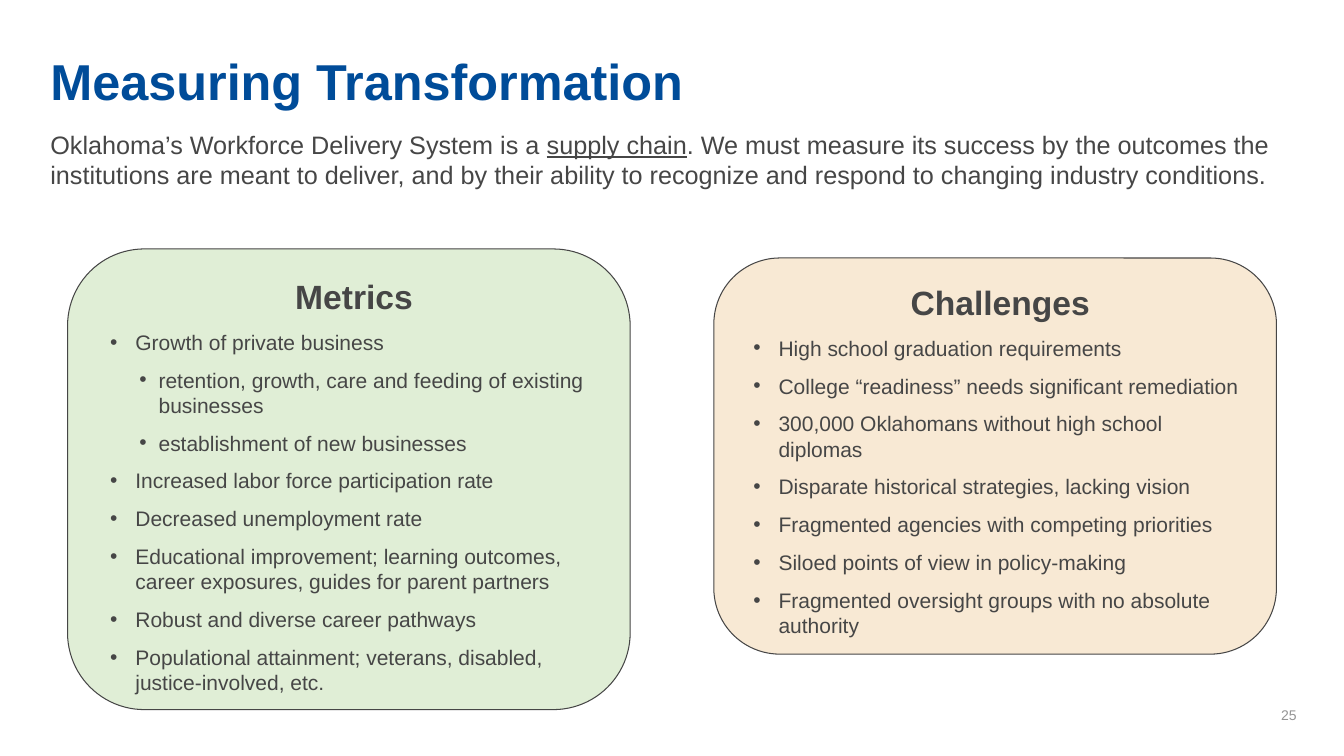
"""Builds the Measuring Transformation slide with its metrics and challenges cards."""
from dataclasses import dataclass
from typing import Any

from lxml import etree
from pptx import Presentation
from pptx import util as u
from pptx.dml.color import RGBColor
from pptx.enum import shapes, text
from pptx.oxml import ns


@dataclass(frozen=True)
class Theme:
    """Colours, font and type sizes."""
    font: str = "Arial"
    title: str = "004C99"
    ink: str = "464646"
    muted: str = "949494"
    metrics: str = "E0EED6"
    challenges: str = "F8E9D4"
    title_size: float = 36
    heading_size: float = 24
    intro_size: float = 18
    item_size: float = 15
    number_size: float = 10


@dataclass(frozen=True)
class Box:
    """Left, top, width and height in inches."""
    left: float
    top: float
    width: float
    height: float

    def emu(self) -> tuple[u.Length, ...]:
        """Return the box as lengths."""
        return tuple(u.Inches(v) for v in (self.left, self.top, self.width, self.height))


@dataclass(frozen=True)
class Item:
    """One bulleted line and its level."""
    words: str
    level: int = 0


@dataclass(frozen=True)
class Card:
    """A rounded panel with a heading and a list."""
    heading: str
    box: Box
    fill: str
    items: tuple[Item, ...]


THEME = Theme()
INDENTS = ((0.25, -0.25), (0.48, -0.19))
BODY = {"line_spacing": 1.0, "space_before": u.Pt(9)}
CENTRED = BODY | {"alignment": text.PP_ALIGN.CENTER}

INTRO = (
    ("Oklahoma’s Workforce Delivery System is a ", False),
    ("supply chain", True),
    (". We must measure its success by the outcomes the institutions are meant to deliver, "
     "and by their ability to recognize and respond to changing industry conditions.", False),
)

CARDS = (
    Card("Challenges", Box(7.08, 2.56, 5.58, 3.93), THEME.challenges, (
        Item("High school graduation requirements"),
        Item("College “readiness” needs significant remediation"),
        Item("300,000 Oklahomans without high school diplomas"),
        Item("Disparate historical strategies, lacking vision"),
        Item("Fragmented agencies with competing priorities"),
        Item("Siloed points of view in policy-making"),
        Item("Fragmented oversight groups with no absolute authority"),
    )),
    Card("Metrics", Box(0.67, 2.47, 5.58, 4.57), THEME.metrics, (
        Item("Growth of private business"),
        Item("retention, growth, care and feeding of existing businesses", 1),
        Item("establishment of new businesses", 1),
        Item("Increased labor force participation rate"),
        Item("Decreased unemployment rate"),
        Item("Educational improvement; learning outcomes, career exposures, "
             "guides for parent partners"),
        Item("Robust and diverse career pathways"),
        Item("Populational attainment; veterans, disabled, justice-involved, etc."),
    )),
)


def apply(target: Any, values: dict[str, Any]) -> None:
    """Set each named attribute on the target."""
    for name, value in values.items():
        setattr(target, name, value)


def write(paragraph: Any, words: str, size: float, color: str, **style: bool) -> None:
    """Add a run in the theme font."""
    run = paragraph.add_run()
    run.text = words
    apply(run.font, {"name": THEME.font, "size": u.Pt(size)} | style)
    run.font.color.rgb = RGBColor.from_string(color)


def set_frame(frame: Any, left: float = 0, anchor: Any = text.MSO_ANCHOR.TOP) -> None:
    """Set wrapping, anchor and insets of a text frame."""
    apply(frame, {
        "word_wrap": True, "vertical_anchor": anchor, "margin_left": u.Inches(left),
        "margin_right": u.Inches(0.1), "margin_top": u.Inches(0.05),
        "margin_bottom": u.Inches(0.05),
    })


def add_passage(slide: Any, box: Box, layout: dict[str, Any],
                anchor: Any = text.MSO_ANCHOR.TOP) -> Any:
    """Add a text box and return its first paragraph."""
    frame = slide.shapes.add_textbox(*box.emu()).text_frame
    set_frame(frame, anchor=anchor)
    paragraph = frame.paragraphs[0]
    apply(paragraph, layout)
    return paragraph


def add_bullet(paragraph: Any, level: int) -> None:
    """Give a paragraph a round bullet and hanging indent."""
    properties = paragraph._p.get_or_add_pPr()
    for name, inches in zip(("marL", "indent"), INDENTS[level]):
        properties.set(name, str(int(u.Inches(inches))))
    etree.SubElement(properties, ns.qn("a:buFont")).set("typeface", THEME.font)
    etree.SubElement(properties, ns.qn("a:buChar")).set("char", "•")


def add_card(slide: Any, card: Card) -> None:
    """Draw a panel with its heading and bullets."""
    panel = slide.shapes.add_shape(shapes.MSO_SHAPE.ROUNDED_RECTANGLE, *card.box.emu())
    panel.shadow.inherit = False
    panel.fill.solid()
    panel.fill.fore_color.rgb = RGBColor.from_string(card.fill)
    panel.line.color.rgb = RGBColor.from_string(THEME.ink)
    panel.line.width = u.Pt(0.75)
    frame = panel.text_frame
    set_frame(frame, left=0.2)
    heading = frame.paragraphs[0]
    apply(heading, CENTRED)
    write(heading, card.heading, THEME.heading_size, THEME.ink, bold=True)
    for item in card.items:
        line = frame.add_paragraph()
        apply(line, BODY | {"level": item.level, "alignment": text.PP_ALIGN.LEFT})
        add_bullet(line, item.level)
        write(line, item.words, THEME.item_size, THEME.ink)


def main() -> None:
    """Build and save the slide."""
    deck = Presentation()
    apply(deck, {"slide_width": u.Inches(13.33), "slide_height": u.Inches(7.5)})
    slide = deck.slides.add_slide(deck.slide_layouts[6])
    title = add_passage(slide, Box(0.5, 0.45, 12.46, 0.92), {"line_spacing": 1.0})
    write(title, "Measuring Transformation", THEME.title_size, THEME.title, bold=True)
    intro = add_passage(slide, Box(0.5, 1.23, 12.46, 1.25), BODY)
    for words, underlined in INTRO:
        write(intro, words, THEME.intro_size, THEME.ink, underline=underlined)
    number = add_passage(slide, Box(9.96, 6.98, 3, 0.22),
                         {"alignment": text.PP_ALIGN.RIGHT}, text.MSO_ANCHOR.MIDDLE)
    write(number, "25", THEME.number_size, THEME.muted)
    for card in CARDS:
        add_card(slide, card)
    deck.save("out.pptx")


if __name__ == "__main__":
    main()
